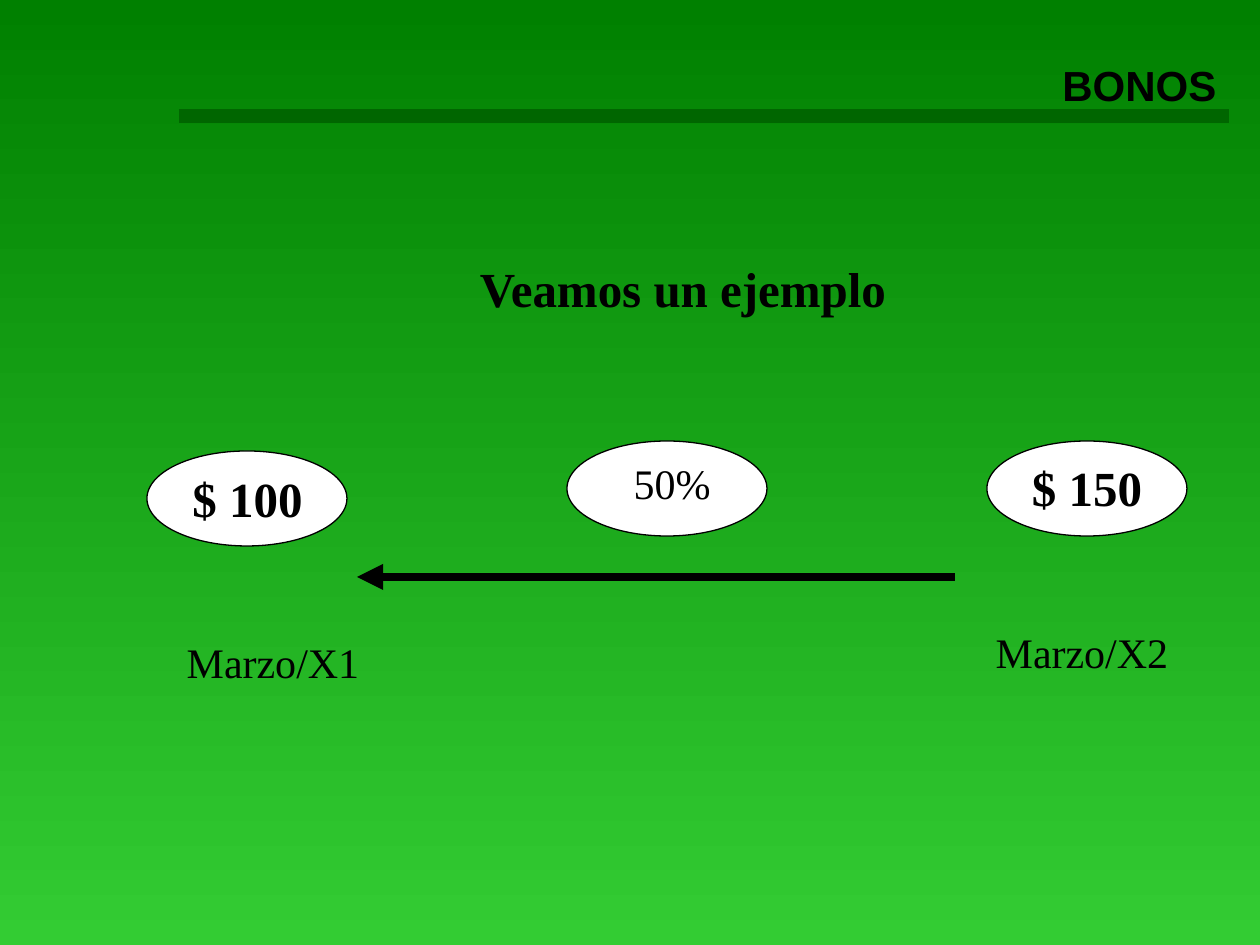
from pptx import Presentation
from pptx.dml.color import RGBColor
from pptx.enum.shapes import MSO_CONNECTOR, MSO_SHAPE
from pptx.enum.text import MSO_ANCHOR, MSO_AUTO_SIZE, PP_ALIGN
from pptx.oxml.ns import qn
from pptx.util import Emu, Pt
from lxml.etree import SubElement

PX = 914400 // 126
BLACK = RGBColor(0, 0, 0)
WHITE = RGBColor(255, 255, 255)
TOP = RGBColor(0, 128, 0)
BOTTOM = RGBColor(51, 204, 51)
RULE = RGBColor(0, 102, 0)
SERIF = "Times New Roman"

TITLE = ("BONOS", (32, 53, 1197, 63), 24, True)
OVALS = [(147, 451), (567, 441), (987, 441)]
OVAL_SIZE = (200, 95)
# text, (left, top, width, height), points, bold
LABELS = [
    ("Veamos un ejemplo", (158, 252, 1050, 72), 28, True),
    ("$ 100", (158, 462, 179, 72), 28, True),
    ("50%", (588, 451, 168, 63), 24, False),
    ("$ 150", (1008, 451, 158, 72), 28, True),
    ("Marzo/X1", (168, 630, 210, 63), 24, False),
    ("Marzo/X2", (977, 620, 210, 63), 24, False),
]
# start, end, colour, points
BAR = ((179, 116), (1229, 116), RULE, 8)
ARROW = ((955, 577), (357, 577), BLACK, 5)


def emu(*nums):
    return [Emu(n * PX) for n in nums]


def write(shape, text, size, bold, font=SERIF, align=PP_ALIGN.CENTER):
    frame = shape.text_frame
    frame.text = text
    frame.word_wrap = True
    frame.auto_size = MSO_AUTO_SIZE.NONE
    frame.vertical_anchor = MSO_ANCHOR.TOP
    par = frame.paragraphs[0]
    par.alignment = align
    par.font.name, par.font.size, par.font.bold = font, Pt(size), bold
    par.font.color.rgb = BLACK


def draw_line(slide, start, end, color, width):
    line = slide.shapes.add_connector(MSO_CONNECTOR.STRAIGHT, *emu(*start, *end))
    line.line.color.rgb = color
    line.line.width = Pt(width)
    SubElement(line._element.spPr, qn("a:effectLst"))
    return line


def draw_oval(slide, spot):
    oval = slide.shapes.add_shape(MSO_SHAPE.OVAL, *emu(*spot, *OVAL_SIZE))
    oval.shadow.inherit = False
    oval.fill.solid()
    oval.fill.fore_color.rgb = WHITE
    oval.line.color.rgb = BLACK
    oval.line.width = Pt(0.75)


def paint(slide):
    """Fill the background with a gradient from top to bottom."""
    fill = slide.background.fill
    fill.gradient()
    fill.gradient_angle = 270
    for stop, color in zip(fill.gradient_stops, (TOP, BOTTOM)):
        stop.color.rgb = color


def main():
    deck = Presentation()
    deck.slide_width, deck.slide_height = emu(1260, 945)
    slide = deck.slides.add_slide(deck.slide_layouts[5])
    paint(slide)

    draw_line(slide, *BAR)
    text, box, size, bold = TITLE
    title = slide.shapes.title
    title.left, title.top, title.width, title.height = emu(*box)
    write(title, text, size, bold, "Arial", PP_ALIGN.RIGHT)

    arrow = draw_line(slide, *ARROW)
    SubElement(arrow.line._get_or_add_ln(), qn("a:tailEnd"), type="triangle")
    for spot in OVALS:
        draw_oval(slide, spot)
    for text, box, size, bold in LABELS:
        write(slide.shapes.add_textbox(*emu(*box)), text, size, bold)
    deck.save("out.pptx")


if __name__ == "__main__":
    main()
